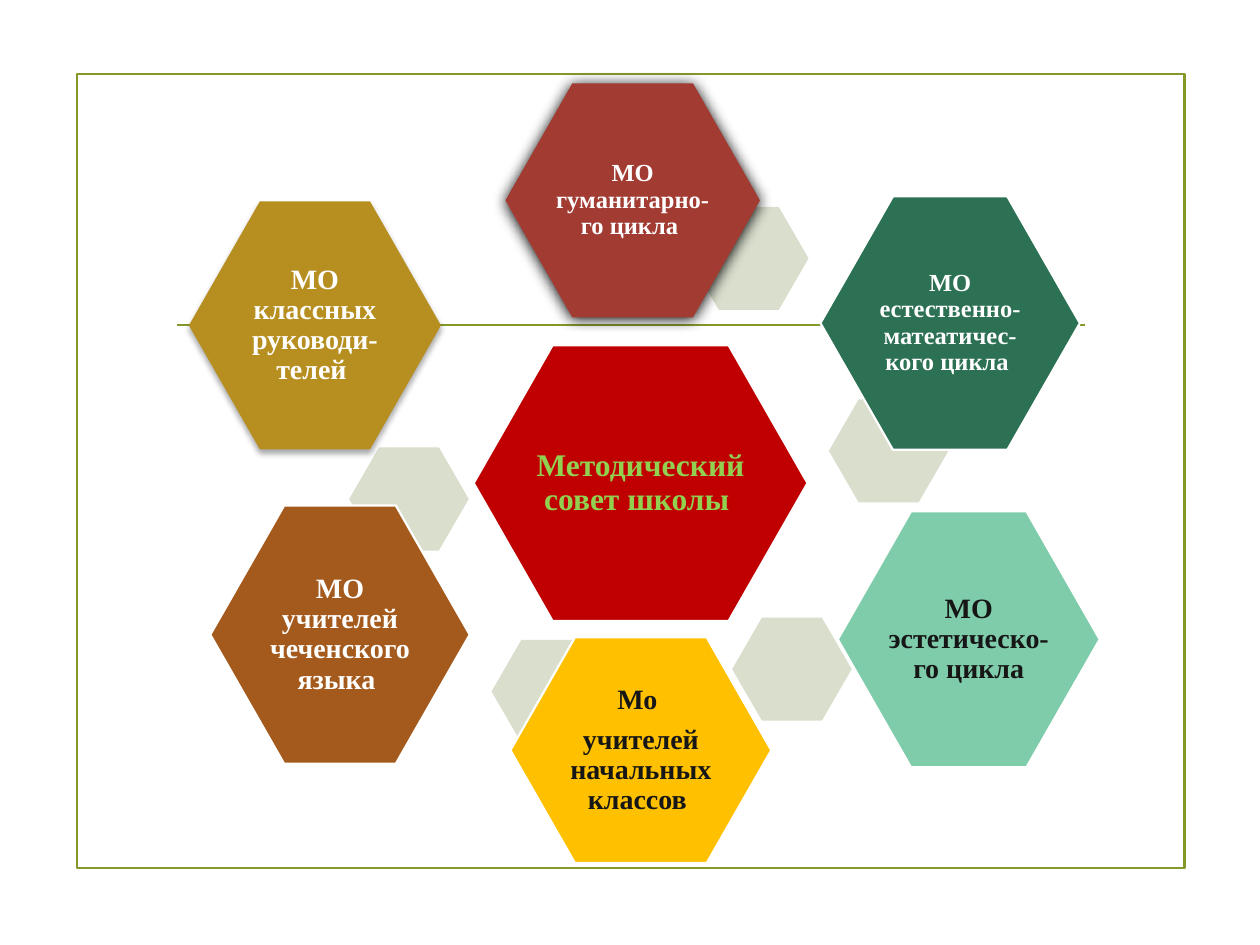
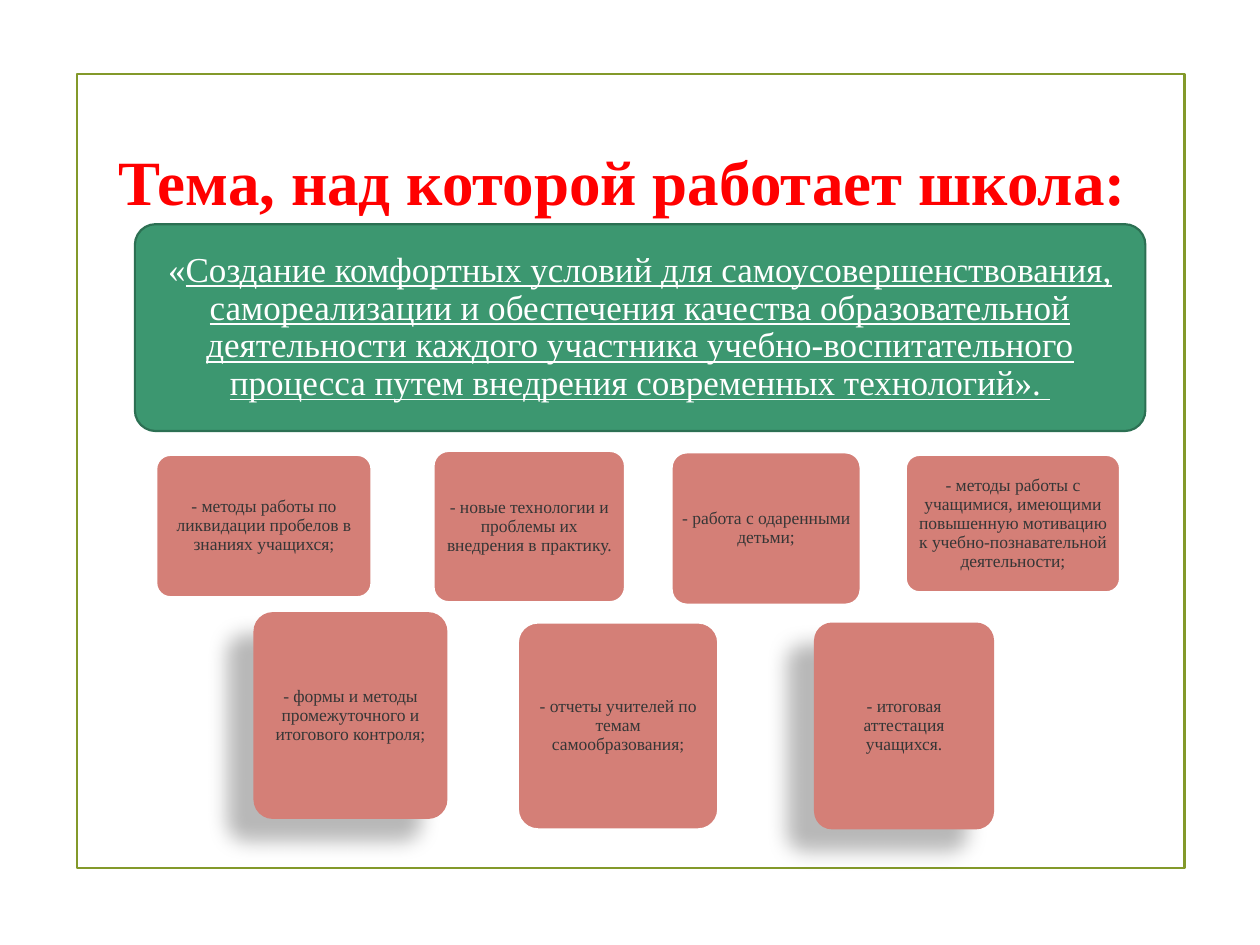
"""Builds two slides on a school's methodical council and its working theme."""
from dataclasses import dataclass
from typing import Any, Optional

from lxml import etree
from pptx import Presentation
from pptx import util as u
from pptx.dml.color import RGBColor
from pptx.enum import shapes, text
from pptx.oxml.ns import qn

FONT = "Times New Roman"
OLIVE = RGBColor(0x83, 0x99, 0x2A)
WHITE = RGBColor(0xFF, 0xFF, 0xFF)
INK = RGBColor(0x16, 0x16, 0x16)
CARD_INK = RGBColor(0x36, 0x36, 0x36)
TITLE_RED = RGBColor(0xFF, 0x00, 0x00)
COUNCIL_RED = RGBColor(0xC0, 0x00, 0x00)
LIME = RGBColor(0x92, 0xD0, 0x50)
PALE = RGBColor(0xD9, 0xDE, 0xCD)
BRICK = RGBColor(0xA2, 0x3C, 0x33)
FOREST = RGBColor(0x2D, 0x71, 0x54)
MINT = RGBColor(0x7F, 0xCC, 0xAB)
AMBER = RGBColor(0xFF, 0xC0, 0x00)
BROWN = RGBColor(0xA4, 0x5A, 0x1D)
MUSTARD = RGBColor(0xB7, 0x8E, 0x20)
GREEN = RGBColor(0x3C, 0x97, 0x70)
GREEN_EDGE = RGBColor(0x2C, 0x70, 0x53)
ROSE = RGBColor(0xD4, 0x7F, 0x77)

HEXAGON = shapes.MSO_SHAPE.HEXAGON
ROUNDED = shapes.MSO_SHAPE.ROUNDED_RECTANGLE


@dataclass(frozen=True)
class Shadow:
    """Outer shadow: opacity in percent, blur and distance in points, angle in degrees."""
    opacity: int
    blur: float
    distance: float
    angle: int


@dataclass(frozen=True)
class Tile:
    """Filled preset shape with optional text, box in centimetres."""
    box: tuple[float, float, float, float]
    fill: Optional[RGBColor]
    lines: tuple[str, ...] = ()
    size: float = 16
    ink: RGBColor = WHITE
    bold: bool = True
    edge: Optional[RGBColor] = WHITE
    inset: float = 0.05
    kind: Any = HEXAGON
    adjust: Optional[float] = 0.286
    shadow: Optional[Shadow] = None


GLOW = Shadow(100, 8.5, 1, 90)
SOFT = Shadow(32, 3.5, 2.2, 90)
CAST = Shadow(28, 11.8, 19.7, 141)

FRAME = Tile((1.55, 1.5, 22.33, 16), None, edge=OLIVE,
             kind=shapes.MSO_SHAPE.RECTANGLE, adjust=None)
ACCENT_SPOTS = ((13.89, 4.17), (16.71, 8.05), (14.76, 12.45), (9.91, 12.9), (7.04, 9.02))
ACCENTS = [Tile((left, top, 2.41, 2.08), PALE, edge=None, adjust=0.289)
           for left, top in ACCENT_SPOTS]
UNIONS = (
    Tile((9.55, 6.96, 6.73, 5.56), COUNCIL_RED, ("Методический совет школы ",),
         18, LIME, inset=0.08),
    Tile((10.19, 1.68, 5.13, 4.72), BRICK, ("МО гуманитарно-го цикла ",),
         14, edge=None, shadow=GLOW),
    Tile((16.54, 3.96, 5.23, 5.11), FOREST, ("МО естественно-матеатичес-кого цикла ",), 14),
    Tile((16.89, 10.31, 5.28, 5.16), MINT, ("МО эстетическо-го цикла",), ink=INK),
    Tile((10.29, 12.85, 5.26, 4.55), AMBER, ("Мо ", "учителей начальных классов "), ink=INK),
    Tile((4.24, 10.19, 5.23, 5.21), BROWN, ("МО учителей чеченского языка ",)),
    Tile((3.81, 4.06, 5.08, 5), MUSTARD, ("МО классных руководи-телей ",),
         edge=None, shadow=SOFT),
)

THEME = Tile((2.72, 4.52, 20.37, 4.17), GREEN, ("«",), 20, bold=False, edge=GREEN_EDGE,
             inset=0.2, kind=ROUNDED, adjust=0.1)
THEME_TEXT = ("Создание комфортных условий для самоусовершенствования, самореализации "
              "и обеспечения качества образовательной деятельности каждого участника "
              "учебно-воспитательного процесса путем внедрения современных технологий». ")
TOPICS = (
    ((3.15, 9.17, 4.34, 2.87), "- методы работы по ликвидации пробелов в знаниях учащихся;", None),
    ((8.74, 9.09, 3.86, 3.05), "- новые технологии и проблемы их внедрения в практику.", None),
    ((13.54, 9.12, 3.81, 3.07), "- работа с одаренными детьми;", None),
    ((18.26, 9.17, 4.32, 2.77), "- методы работы с учащимися, имеющими повышенную мотивацию "
     "к учебно-познавательной деятельности;", None),
    ((5.11, 12.34, 3.91, 4.17), "- формы и методы промежуточного и итогового контроля;", CAST),
    ((10.44, 12.55, 4.04, 4.17), "- отчеты учителей по темам самообразования;", None),
    ((16.41, 12.55, 3.63, 4.17), "- итоговая аттестация учащихся.", CAST),
)
TOPIC_CARDS = [Tile(box, ROSE, (topic,), 10, CARD_INK, False,
                    None if shadow else WHITE, 0.1, ROUNDED, 0.1, shadow)
               for box, topic, shadow in TOPICS]


def assign(target: Any, values: dict[str, Any]) -> None:
    """Set every named attribute on the target."""
    for name, value in values.items():
        setattr(target, name, value)


def add_words(paragraph: Any, words: str, size: float, ink: RGBColor, **extra: Any) -> None:
    """Append a formatted run to a paragraph."""
    run = paragraph.add_run()
    run.text = words
    assign(run.font, {"name": FONT, "size": u.Pt(size), **extra})
    run.font.color.rgb = ink


def cast_shadow(shape: Any, shadow: Shadow) -> None:
    """Fill the shape's effect list with a black outer shadow."""
    effects = shape.element.spPr.find(qn("a:effectLst"))
    outer = etree.SubElement(effects, qn("a:outerShdw"), {
        "blurRad": str(int(u.Pt(shadow.blur))), "dist": str(int(u.Pt(shadow.distance))),
        "dir": str(shadow.angle * 60000), "algn": "ctr", "rotWithShape": "0"})
    black = etree.SubElement(outer, qn("a:srgbClr"), val="000000")
    etree.SubElement(black, qn("a:alpha"), val=str(shadow.opacity * 1000))


def draw_tile(slide: Any, tile: Tile) -> Any:
    """Draw one tile with its text and return the shape."""
    shape = slide.shapes.add_shape(tile.kind, *map(u.Cm, tile.box))
    if tile.adjust is not None:
        shape.adjustments[0] = tile.adjust
    if tile.fill is None:
        shape.fill.background()
    else:
        shape.fill.solid()
        shape.fill.fore_color.rgb = tile.fill
    if tile.edge is None:
        shape.line.fill.background()
    else:
        shape.line.color.rgb = tile.edge
        shape.line.width = u.Pt(1.25)
    shape.shadow.inherit = False
    if tile.shadow:
        cast_shadow(shape, tile.shadow)
    frame = shape.text_frame
    margins = dict.fromkeys(("margin_left", "margin_top", "margin_right", "margin_bottom"),
                            u.Cm(tile.inset))
    assign(frame, {"word_wrap": True, "vertical_anchor": text.MSO_ANCHOR.MIDDLE, **margins})
    for index, line in enumerate(tile.lines):
        paragraph = frame.add_paragraph() if index else frame.paragraphs[0]
        assign(paragraph, {"alignment": text.PP_ALIGN.CENTER, "line_spacing": 0.9})
        if index < len(tile.lines) - 1:
            paragraph.space_after = u.Pt(tile.size * 0.35)
        add_words(paragraph, line, tile.size, tile.ink, bold=tile.bold)
    return shape


def draw_rule(slide: Any) -> None:
    """Draw the thin horizontal rule behind the hexagons."""
    rule = slide.shapes.add_connector(shapes.MSO_CONNECTOR.STRAIGHT,
                                      u.Cm(3.56), u.Cm(6.55), u.Cm(21.87), u.Cm(6.55))
    rule.line.color.rgb = OLIVE
    rule.line.width = u.Pt(1.25)
    etree.SubElement(rule.element.spPr, qn("a:effectLst"))


def build_council(deck: Any) -> None:
    """Build the hexagon slide and place the shared frame on the master."""
    slide = deck.slides.add_slide(deck.slide_layouts[6])
    border = draw_tile(slide, FRAME)
    deck.slide_master.shapes.element.insert(2, border.element)
    draw_rule(slide)
    for tile in (*ACCENTS, *UNIONS):
        draw_tile(slide, tile)


def build_theme(deck: Any) -> None:
    """Build the slide with the school's theme and topic cards."""
    slide = deck.slides.add_slide(deck.slide_layouts[5])
    title = slide.shapes.title
    assign(title, {"left": u.Cm(1.7), "top": u.Cm(1.73),
                   "width": u.Cm(22), "height": u.Cm(3.81)})
    assign(title.text_frame, {"word_wrap": True, "vertical_anchor": text.MSO_ANCHOR.MIDDLE})
    heading = title.text_frame.paragraphs[0]
    heading.alignment = text.PP_ALIGN.CENTER
    add_words(heading, "Тема, над которой работает школа: ", 36, TITLE_RED, bold=True)
    banner = draw_tile(slide, THEME)
    add_words(banner.text_frame.paragraphs[0], THEME_TEXT, THEME.size, THEME.ink,
              bold=False, underline=True)
    for card in TOPIC_CARDS:
        draw_tile(slide, card)


def main() -> None:
    """Create and save the presentation."""
    deck = Presentation()
    assign(deck, {"slide_width": u.Cm(25.4), "slide_height": u.Cm(19.05)})
    build_council(deck)
    build_theme(deck)
    deck.save("out.pptx")


if __name__ == "__main__":
    main()
